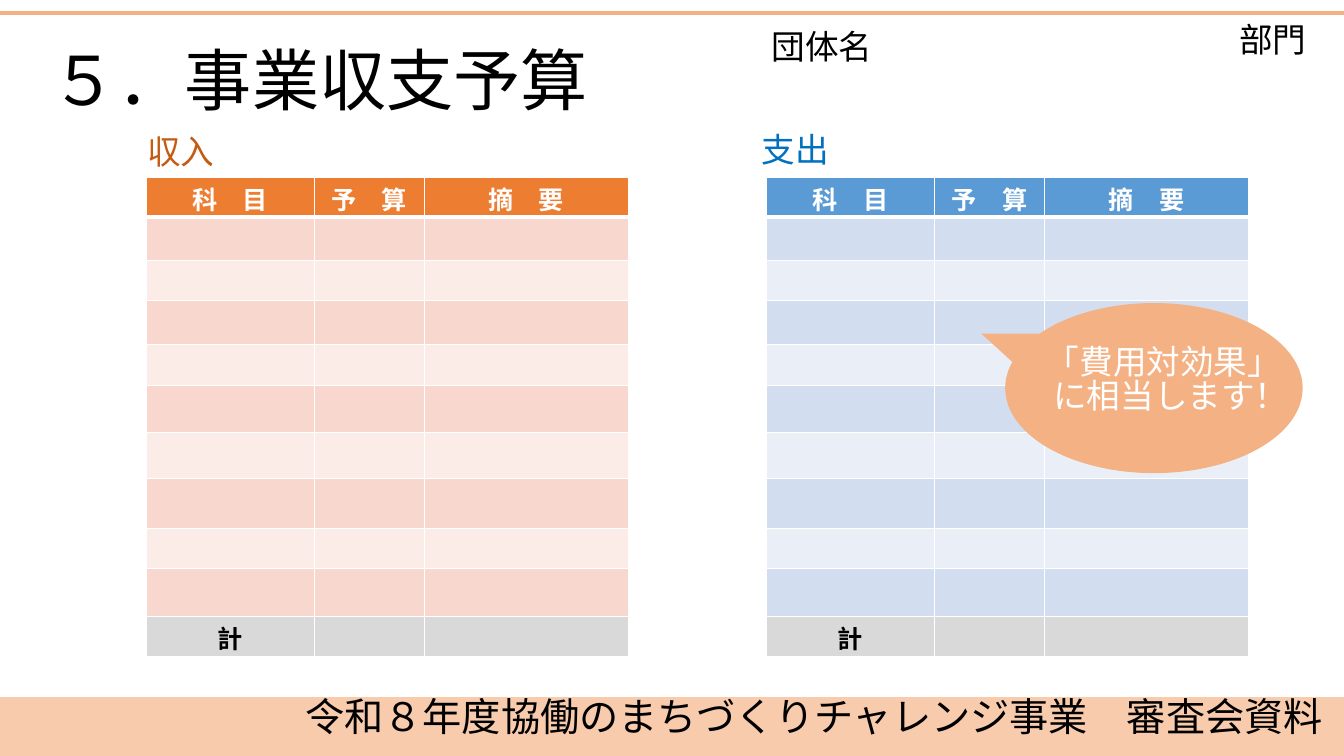
"""Build the budget slide with income and expenditure tables and a callout."""
from dataclasses import dataclass

from lxml import etree
from pptx import Presentation
from pptx.dml.color import RGBColor
from pptx.enum.shapes import MSO_CONNECTOR, MSO_SHAPE
from pptx.enum.text import MSO_ANCHOR, PP_ALIGN
from pptx.oxml.ns import qn
from pptx.util import Pt

STRAIGHT = MSO_CONNECTOR.STRAIGHT
RECTANGLE = MSO_SHAPE.RECTANGLE
CALLOUT = MSO_SHAPE.OVAL_CALLOUT
MIDDLE = MSO_ANCHOR.MIDDLE
LEFT, CENTER = PP_ALIGN.LEFT, PP_ALIGN.CENTER


@dataclass(frozen=True)
class Theme:
    font: str = "Noto Sans CJK JP"
    table_font: str = "Calibri"
    title_size: int = 48
    footer_size: int = 28
    label_size: int = 24
    table_size: int = 18
    black: str = "000000"
    white: str = "FFFFFF"
    orange: str = "F4B183"
    footer_band: str = "F8CBAD"
    total_row: str = "D9D9D9"
    income: str = "C55A11"
    income_rows: tuple = ("ED7D31", "F8D7CE", "FCECE8")
    expense: str = "0070C0"
    expense_rows: tuple = ("5B9BD5", "D2DEEF", "EAEFF7")


theme = Theme()


def write_text(frame, text, size=theme.label_size, color=theme.black,
               font=theme.font, bold=False, align=LEFT, spacing=0.86):
    frame.word_wrap = True
    for index, line in enumerate(text.split("\n")):
        paragraph = frame.add_paragraph() if index else frame.paragraphs[0]
        paragraph.alignment = align
        paragraph.line_spacing = spacing
        run = paragraph.add_run()
        run.text = line
        run.font.size = Pt(size)
        run.font.bold = bold
        run.font.name = font
        run.font.color.rgb = RGBColor.from_string(color)
        east_asian = etree.SubElement(run.font._element, qn("a:ea"))
        east_asian.set("typeface", theme.font)


def set_border(cell, side, width):
    properties = cell._tc.get_or_add_tcPr()
    line = etree.SubElement(properties, qn(f"a:ln{side}"), w=str(Pt(width)))
    fill = etree.SubElement(line, qn("a:solidFill"))
    etree.SubElement(fill, qn("a:srgbClr"), val=theme.white)


presentation = Presentation()
presentation.slide_width = Pt(960)
presentation.slide_height = Pt(540)
slide = presentation.slides.add_slide(presentation.slide_layouts[6])
shapes = slide.shapes

footer_band = shapes.add_shape(RECTANGLE, Pt(0), Pt(498), Pt(960), Pt(42))
footer_band.shadow.inherit = False
footer_band.fill.solid()
footer_band.fill.fore_color.rgb = RGBColor.from_string(theme.footer_band)
footer_band.line.fill.background()

top_rule = shapes.add_connector(STRAIGHT, Pt(0), Pt(9.5), Pt(960), Pt(9.5))
top_rule.line.color.rgb = RGBColor.from_string(theme.orange)
top_rule.line.width = Pt(3)
etree.SubElement(top_rule._element.spPr, qn("a:effectLst"))

HEADINGS = ("科　目", "予　算", "摘　要")
COLUMN_WIDTHS = (120, 78.5, 146)
ROW_HEIGHTS = (28, 31, 28.5, 31.5, 29.5, 33.5, 33, 35.5, 28.5, 34.5, 28.5)
LAST_ROW = len(ROW_HEIGHTS) - 1

for left, (header_fill, *band_fills) in (
    (104.5, theme.income_rows),
    (547.5, theme.expense_rows),
):
    budget = shapes.add_table(
        len(ROW_HEIGHTS), len(COLUMN_WIDTHS), Pt(left), Pt(127),
        Pt(sum(COLUMN_WIDTHS)), Pt(sum(ROW_HEIGHTS)),
    ).table
    for column, width in zip(budget.columns, COLUMN_WIDTHS):
        column.width = Pt(width)
    for row_index, height in enumerate(ROW_HEIGHTS):
        budget.rows[row_index].height = Pt(height)
        if row_index == 0:
            texts, row_fill, text_color = HEADINGS, header_fill, theme.white
        elif row_index == LAST_ROW:
            texts, row_fill, text_color = ("計", "", ""), theme.total_row, theme.black
        else:
            texts, row_fill, text_color = ("", "", ""), band_fills[(row_index - 1) % 2], theme.black
        for cell, text in zip(budget.rows[row_index].cells, texts):
            cell.margin_top, cell.margin_bottom = Pt(2), Pt(0)
            set_border(cell, "L", 1)
            set_border(cell, "R", 1)
            set_border(cell, "T", 3 if row_index == 1 else 1)
            set_border(cell, "B", 3 if row_index == 0 else 1)
            cell.fill.solid()
            cell.fill.fore_color.rgb = RGBColor.from_string(row_fill)
            if row_index == LAST_ROW:
                cell.vertical_anchor = MIDDLE
            if text:
                write_text(cell.text_frame, text, size=theme.table_size,
                           color=text_color, font=theme.table_font,
                           bold=True, align=CENTER, spacing=1.0)

callout = shapes.add_shape(CALLOUT, Pt(718), Pt(216.5), Pt(212.5), Pt(121.5))
callout.adjustments[0] = -0.58
callout.adjustments[1] = -0.32
callout.shadow.inherit = False
callout.fill.solid()
callout.fill.fore_color.rgb = RGBColor.from_string(theme.orange)
callout.line.fill.background()

for text, left, top, width, height, style in (
    ("５．事業収支予算", 29, 32, 500, 65, {"size": theme.title_size}),
    ("団体名", 544, 19, 300, 36, {}),
    ("部門", 878, 14.5, 80, 36, {}),
    ("収入", 98, 94.5, 133, 36, {"color": theme.income}),
    ("支出", 537, 93, 133, 36, {"color": theme.expense}),
    ("「費用対効果」\n に相当します！", 740, 244, 205, 65, {"color": theme.white}),
    ("令和８年度協働のまちづくりチャレンジ事業　審査会資料", 211, 496, 749, 41,
     {"size": theme.footer_size}),
):
    text_box = shapes.add_textbox(Pt(left), Pt(top), Pt(width), Pt(height))
    write_text(text_box.text_frame, text, **style)

presentation.save("out.pptx")
